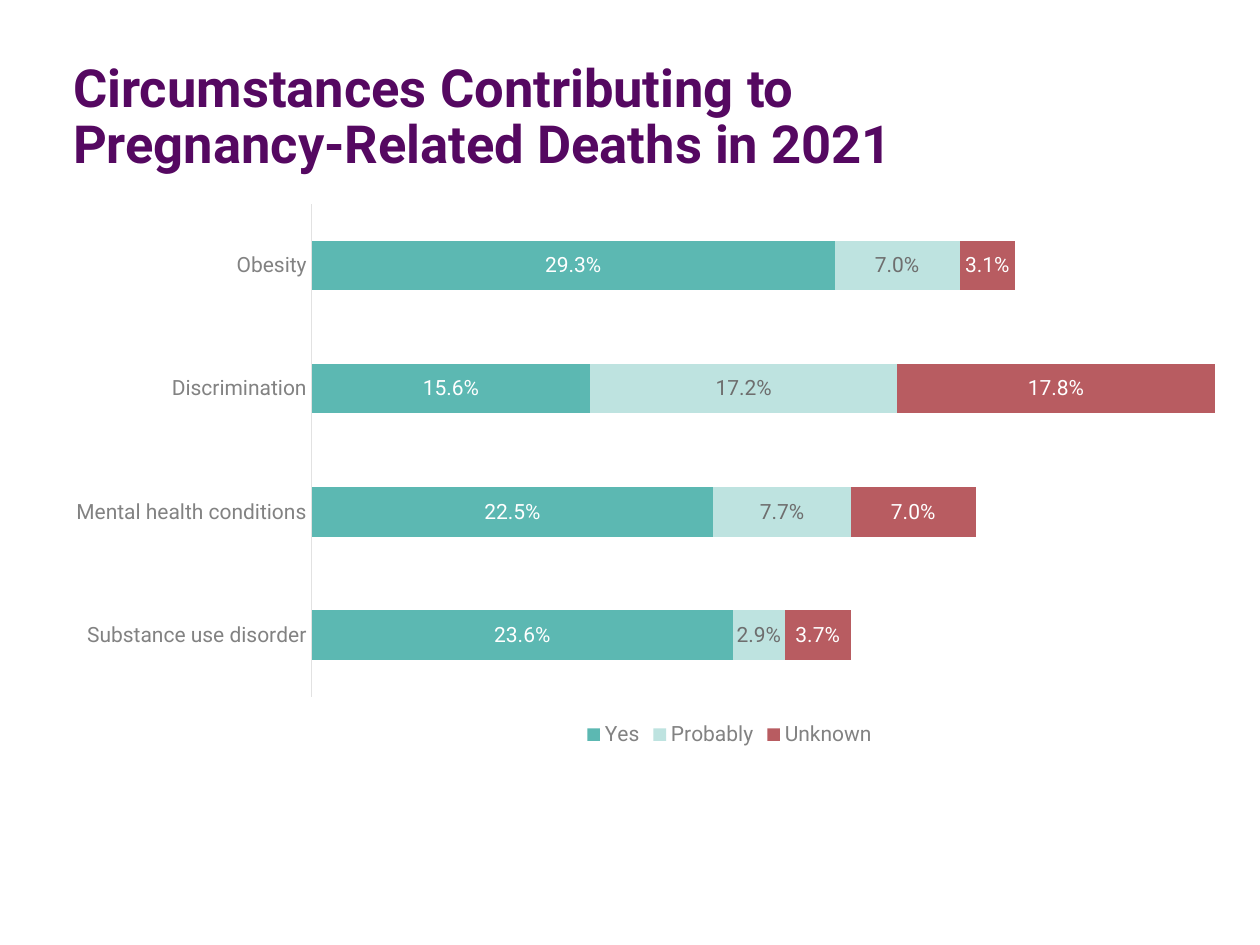
from lxml import etree
from pptx import Presentation
from pptx.chart.data import CategoryChartData
from pptx.dml.color import RGBColor
from pptx.enum.chart import (
    XL_CHART_TYPE as ChartType,
    XL_LABEL_POSITION as LabelPosition,
    XL_LEGEND_POSITION as LegendPosition,
    XL_TICK_MARK as TickMark,
)
from pptx.enum.text import MSO_ANCHOR as Anchor, MSO_AUTO_SIZE as AutoSize, PP_ALIGN as Align
from pptx.oxml.ns import qn
from pptx.util import Inches, Pt

FONT = "Roboto"
COLORS = {
    "title": "550861",
    "text": "3E3E3E",
    "muted": "828282",
    "axis": "E2E2E2",
    "white": "FFFFFF",
    "gray": "6E6E6E",
    "teal": "5CB8B2",
    "mint": "BEE3E0",
    "red": "B85C61",
}
CIRCUMSTANCES = ["Substance use disorder", "Mental health conditions", "Discrimination", "Obesity"]
ANSWERS = [
    ("Yes", (0.236, 0.225, 0.156, 0.293), "teal", "white"),
    ("Probably", (0.029, 0.077, 0.172, 0.07), "mint", "gray"),
    ("Unknown", (0.037, 0.07, 0.178, 0.031), "red", "white"),
]


def rgb(name):
    """Return the named colour."""
    return RGBColor.from_string(COLORS[name])


def style_font(font, size, color, bold=False):
    """Apply the slide's typeface with a size, colour and weight."""
    font.name = FONT
    font.size = Pt(size)
    font.bold = bold
    font.color.rgb = rgb(color)


def add_title(slide, wording):
    """Place and format the slide title."""
    title = slide.shapes.title
    title.left, title.top = Inches(0.58), Inches(0.35)
    title.width, title.height = Inches(7.17), Inches(1.18)
    frame = title.text_frame
    frame.word_wrap = True
    frame.auto_size = AutoSize.NONE
    frame.vertical_anchor = Anchor.MIDDLE
    frame.margin_left = 0
    frame.margin_top = frame.margin_right = frame.margin_bottom = Inches(0.1)
    paragraph = frame.paragraphs[0]
    paragraph.alignment = Align.LEFT
    paragraph.line_spacing = 0.9
    run = paragraph.add_run()
    run.text = wording
    style_font(run.font, 30, "title", bold=True)


def set_plot_layout(chart, **fractions):
    """Fix the inner plot area as fractions of the chart."""
    plot_area = chart._chartSpace.chart.plotArea
    for old in plot_area.findall(qn("c:layout")):
        plot_area.remove(old)
    layout = etree.Element(qn("c:layout"))
    manual = etree.SubElement(layout, qn("c:manualLayout"))
    settings = {"layoutTarget": "inner", "xMode": "edge", "yMode": "edge", **fractions}
    for tag, value in settings.items():
        etree.SubElement(manual, qn(f"c:{tag}")).set("val", str(value))
    plot_area.insert(0, layout)


def style_axes(chart):
    """Show only the category axis and its labels."""
    circumstances = chart.category_axis
    circumstances.major_tick_mark = circumstances.minor_tick_mark = TickMark.NONE
    circumstances.format.line.color.rgb = rgb("axis")
    circumstances.format.line.width = Pt(0.75)
    style_font(circumstances.tick_labels.font, 12, "muted")
    share = chart.value_axis
    share.minimum_scale, share.maximum_scale = 0, 0.6
    share.has_major_gridlines = False
    share.tick_labels.number_format = "0.0%"
    share.tick_labels.number_format_is_linked = False
    share.visible = False


def style_answer(answer, fill, label_color):
    """Colour one series and label its bars."""
    answer.format.fill.solid()
    answer.format.fill.fore_color.rgb = rgb(fill)
    labels = answer.data_labels
    labels.show_value = True
    labels.position = LabelPosition.CENTER
    labels.number_format = "0.0%"
    labels.number_format_is_linked = False
    style_font(labels.font, 12, label_color)


def add_circumstances_chart(slide):
    """Add the stacked bars with their legend."""
    data = CategoryChartData(number_format="0.0%")
    data.categories = CIRCUMSTANCES
    for name, shares, _, _ in ANSWERS:
        data.add_series(name, shares)
    chart = slide.shapes.add_chart(
        ChartType.BAR_STACKED, Inches(0.39), Inches(1.53), Inches(10.8), Inches(4.44), data
    ).chart
    chart.has_title = False
    style_font(chart.font, 10, "text")
    set_plot_layout(chart, x=0.193, y=0.02, w=0.787, h=0.881)
    style_axes(chart)
    plot = chart.plots[0]
    plot.gap_width, plot.overlap = 150, 100
    plot.vary_by_categories = False
    for answer, (_, _, fill, label_color) in zip(plot.series, ANSWERS):
        style_answer(answer, fill, label_color)
    chart.has_legend = True
    chart.legend.position = LegendPosition.BOTTOM
    chart.legend.include_in_layout = False
    style_font(chart.legend.font, 12, "muted")


def main():
    """Build and save the slide."""
    deck = Presentation()
    deck.slide_width, deck.slide_height = Inches(10), Inches(7.5)
    slide = deck.slides.add_slide(deck.slide_layouts[5])
    add_title(slide, "Circumstances Contributing to Pregnancy-Related Deaths in 2021")
    add_circumstances_chart(slide)
    deck.save("out.pptx")


if __name__ == "__main__":
    main()
